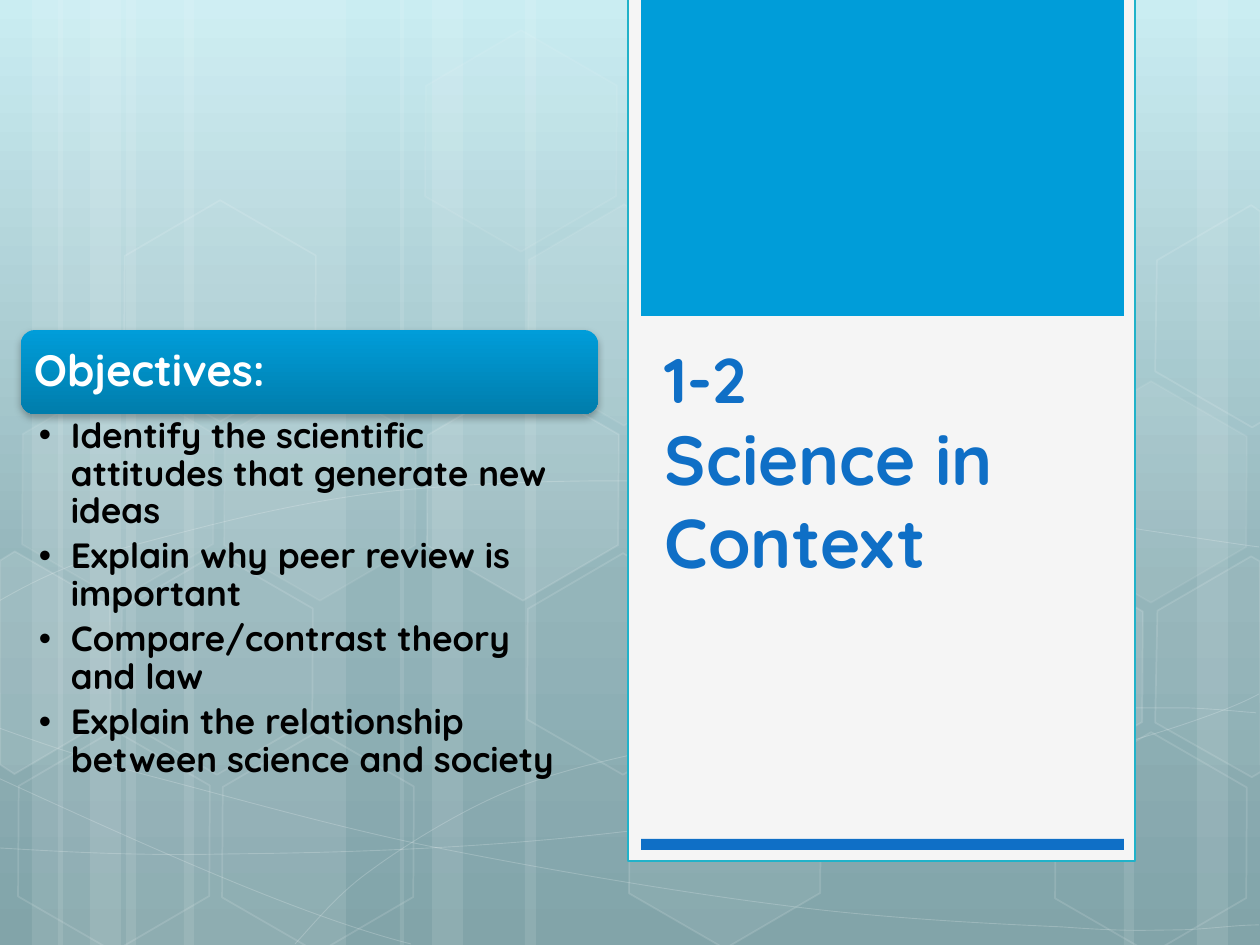
"""Builds the title slide "1-2 Science in Context" with its objectives."""
from copy import deepcopy
from math import cos, radians, sin
from lxml.etree import SubElement as Sub
from pptx import Presentation
from pptx.dml.color import RGBColor as Rgb
from pptx.enum.shapes import MSO_SHAPE as Kind
from pptx.enum.text import MSO_ANCHOR as Anchor
from pptx.oxml.ns import qn
from pptx.util import Pt

PX = 914400 / 126
FONT = "Quicksand"
TILT = 30
HUES = {"white": "FFFFFF", "black": "000000", "paper": "F5F5F5", "edge": "21B2C9",
        "sky": "009DD9", "deep": "007DAC", "blue": "0F6FC6",
        "top": "C4EBF1", "mid": "88ADB3", "low": "749AA0"}

BANDS = [(126, 220), (0, 63), (32, 104), (184, 220), (58, 63), (90, 104), (913, 221),
         (1197, 63), (1124, 104), (525, 388), (400, 63), (432, 104)]
WAVES = [
    [(-1, 848), (67, 852), (135, 856), (229, 854), (324, 853), (440, 850), (566, 838),
     (693, 825), (872, 801), (987, 777), (1102, 753), (1220, 716), (1259, 694)],
    [(-1, 601), (34, 581), (71, 562), (142, 543), (214, 524), (315, 496), (427, 488),
     (539, 479), (674, 478), (813, 488), (951, 498), (1183, 537), (1259, 547)],
    [(-4, 777), (149, 847), (301, 916), (411, 944)],
    [(-1, 728), (38, 742), (77, 756), (150, 776), (224, 795), (334, 827), (438, 848),
     (543, 869), (677, 892), (780, 905), (885, 919), (997, 924), (1063, 927),
     (1130, 932), (1148, 930), (1179, 930), (1212, 929), (1235, 925), (1259, 925)],
    [(295, 944), (318, 919), (339, 893), (370, 871), (401, 848), (442, 823), (478, 805),
     (513, 788), (534, 780), (581, 767), (627, 755), (712, 737), (756, 728),
     (800, 719), (806, 719), (845, 717), (885, 713), (946, 709), (990, 708),
     (1033, 707), (1106, 708), (1106, 708), (1134, 708), (1162, 708), (1189, 708),
     (1213, 709), (1234, 711), (1245, 712), (1256, 713), (1253, 712), (1256, 713)],
]
CELLS = [(413, 394, 10, 12), (513, 568, 0, 12), (514, 219, 7, 8), (411, 45, 4, 8),
         (615, 742, 6, 12), (4, 745, 0, 12), (8, 393, 7, 8), (107, 568, 0, 12),
         (208, 746, 0, 12), (210, 394, 7, 8), (110, 215, 0, 12), (937, 571, 10, 12),
         (1041, 747, 0, 12), (1041, 396, 7, 8)]
PARTS = [
    ((34, 674), [(0, 561), (14, 552), (110, 607), (110, 718), (14, 774), (0, 765)], 10),
    ((1230, 655), [(1157, 611), (1251, 556), (1260, 562), (1261, 772), (1252, 777),
                   (1155, 722)], 4),
    ((1230, 304), [(1157, 261), (1251, 205), (1260, 212), (1261, 422), (1252, 427),
                   (1155, 372)], 0),
]
GOALS = ["Identify the scientific attitudes that generate new ideas",
         "Explain why peer review is important",
         "Compare/contrast theory and law",
         "Explain the relationship between science and society"]


def hue(name):
    """Return the named colour."""
    return Rgb.from_string(HUES[name])


def size(*vals):
    """Turn px lengths into EMU."""
    return [round(v * PX) for v in vals]


def fade(node, pct):
    """Set the opacity of the first colour below a node."""
    Sub(next(node.iter(qn("a:srgbClr"))), qn("a:alpha"), val=str(pct * 1000))


def paint(shape, fill=None, line=None, width=1.0, clear=100, faint=100):
    """Set fill, line and opacity of a shape."""
    shape.shadow.inherit = False
    props = shape._element.spPr
    if fill:
        shape.fill.solid()
        shape.fill.fore_color.rgb = hue(fill)
        if clear < 100:
            fade(props.find(qn("a:solidFill")), clear)
    else:
        shape.fill.background()
    if line:
        shape.line.color.rgb = hue(line)
        shape.line.width = Pt(width)
        if faint < 100:
            fade(props.find(qn("a:ln")), faint)
    else:
        shape.line.fill.background()
    return shape


def blend(fill, root, stops):
    """Give a fill a gradient that runs downwards."""
    fill.gradient()
    fill.gradient_angle = 270
    marks = next(root.iter(qn("a:gsLst")))
    while len(marks) < len(stops):
        marks.append(deepcopy(marks[0]))
    for mark, (pos, name) in zip(fill.gradient_stops, stops):
        mark.position = pos
        mark.color.rgb = hue(name)


def block(slide, box, kind=Kind.RECTANGLE, **look):
    """Add a preset shape."""
    return paint(slide.shapes.add_shape(kind, *size(*box)), **look)


def trace(slide, dots, close, **look):
    """Add an outline through points."""
    pen = slide.shapes.build_freeform(*dots[0], scale=PX)
    pen.add_line_segments(dots[1:], close=close)
    return paint(pen.convert_to_shape(), line="white", **look)


def wave(slide, knots):
    """Add a chain of cubic curves, three knots to a segment."""
    shape = trace(slide, knots, False, width=0.5, faint=20)
    legs = list(shape._element.iter(qn("a:lnTo")))
    for i in range(0, len(legs), 3):
        legs[i].tag = qn("a:cubicBezTo")
        for leg in legs[i + 1:i + 3]:
            legs[i].append(leg[0])
            leg.getparent().remove(leg)


def cell(slide, x, y, clear, faint):
    """Add one upright hexagon of the backdrop."""
    hexa = block(slide, (x, y, 220, 192), Kind.HEXAGON, fill="white" if clear else None,
                 line="white", clear=clear, faint=faint)
    hexa.adjustments[0] = 0.285
    hexa.rotation = TILT


def part(slide, mid, dots, clear):
    """Add a hexagon cut off by the slide edge, tilted about its middle."""
    c, s = cos(radians(TILT)), sin(radians(TILT))
    flat = []
    for x, y in dots + dots[:1]:
        dx, dy = x - mid[0], y - mid[1]
        flat.append((mid[0] + dx * c + dy * s, mid[1] + dy * c - dx * s))
    shape = trace(slide, flat, True, fill="white" if clear else None, clear=clear, faint=12)
    shape.rotation = TILT


def label(slide, box, pads, anchor):
    """Add a text box and return its frame."""
    frame = slide.shapes.add_textbox(*size(*box)).text_frame
    frame.word_wrap = True
    frame.vertical_anchor = anchor
    (frame.margin_left, frame.margin_top,
     frame.margin_right, frame.margin_bottom) = size(*pads)
    return frame


def style(font, points, name):
    """Set the face, size and colour of a font."""
    font.name, font.size, font.bold = FONT, Pt(points), True
    font.color.rgb = hue(name)


def backdrop(slide):
    """Draw the gradient, bands, waves and hexagons."""
    blend(slide.background.fill, slide._element, [(0, "top"), (0.62, "mid"), (1, "low")])
    for x, wide in BANDS:
        block(slide, (x, 0, wide, 945), fill="white", clear=10)
    for knots in WAVES:
        wave(slide, knots)
    for spot in CELLS:
        cell(slide, *spot)
    for piece in PARTS:
        part(slide, *piece)


def panel(slide):
    """Draw the title panel and its title."""
    block(slide, (628, -3, 507, 864), fill="paper", line="edge", width=1.25)
    block(slide, (641, -3, 483, 319), fill="sky")
    block(slide, (641, 839, 483, 11), fill="blue")
    frame = label(slide, (653, 354, 456, 234), (12, 6, 12, 6), Anchor.BOTTOM)
    para = frame.paragraphs[0]
    style(para.font, 39.6, "blue")
    lead = para.add_run()
    lead.text = "1-2"
    lead.font.size = Pt(36)
    para.add_line_break()
    para.add_run().text = "Science in Context"


def header(slide):
    """Draw the heading bar of the objectives."""
    box = (21, 330, 577, 84)
    bar = block(slide, box, Kind.ROUNDED_RECTANGLE)
    props = bar._element.spPr
    blend(bar.fill, props, [(0, "sky"), (1, "deep")])
    glow = Sub(props.find(qn("a:effectLst")), qn("a:outerShdw"), blurRad=str(Pt(4)),
               dist=str(Pt(2)), dir="5400000", rotWithShape="0")
    Sub(glow, qn("a:srgbClr"), val=HUES["black"])
    fade(glow, 28)
    para = label(slide, box, (13, 13, 13, 13), Anchor.MIDDLE).paragraphs[0]
    para.text, para.line_spacing = "Objectives:", 0.9
    style(para.font, 25, "white")


def goals(slide):
    """Write the bulleted objectives."""
    frame = label(slide, (21, 414, 577, 464), (18, 4, 24, 4), Anchor.TOP)
    inset, = size(32)
    for i, text in enumerate(GOALS):
        para = frame.add_paragraph() if i else frame.paragraphs[0]
        para.text, para.line_spacing, para.space_after = text, 0.9, Pt(4.2)
        style(para.font, 20, "black")
        props = para._p.get_or_add_pPr()
        props.set("marL", str(inset))
        props.set("indent", str(-inset))
        for tag, key, val in (("a:buFont", "typeface", "Arial"), ("a:buChar", "char", "•")):
            mark = props.makeelement(qn(tag), {key: val})
            props.find(qn("a:defRPr")).addprevious(mark)


def main():
    """Build and save the slide."""
    deck = Presentation()
    deck.slide_width, deck.slide_height = size(1260, 945)
    slide = deck.slides.add_slide(deck.slide_layouts[6])
    for draw in (backdrop, panel, header, goals):
        draw(slide)
    deck.save("out.pptx")


if __name__ == "__main__":
    main()
